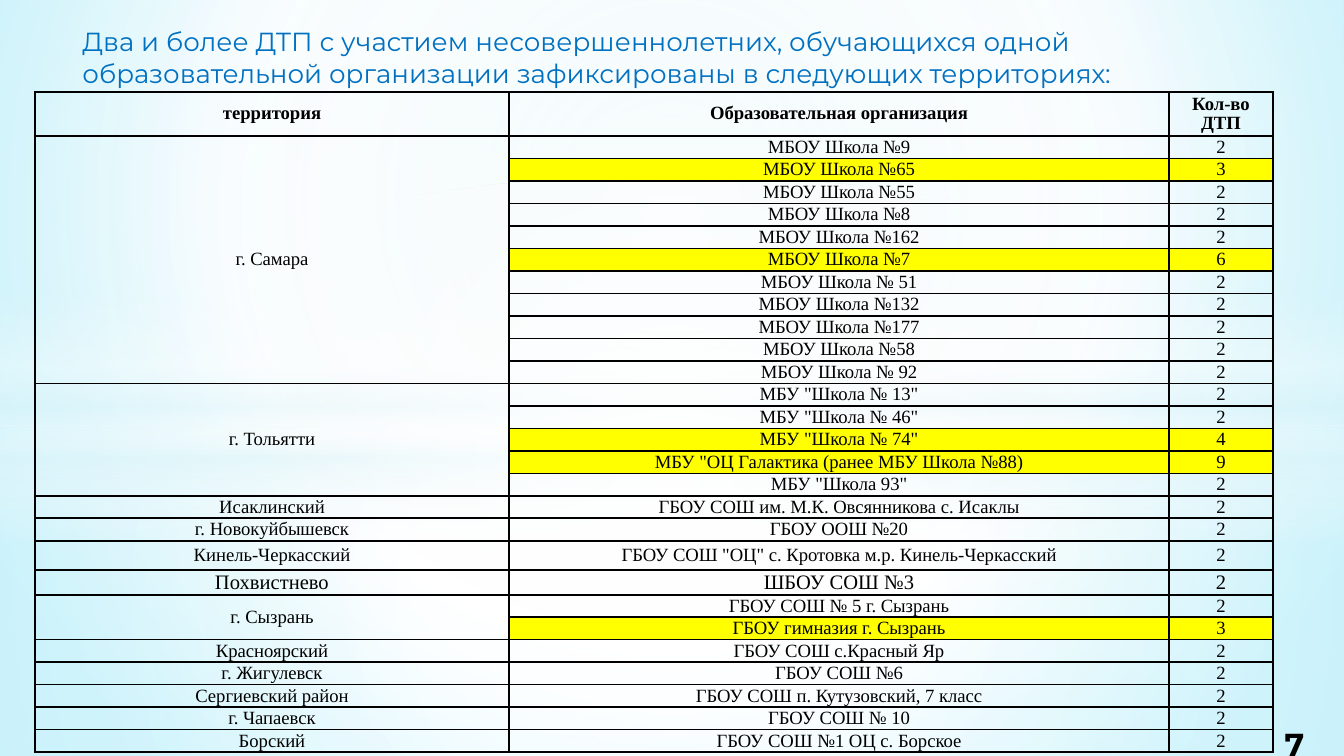
from lxml import etree
from pptx import Presentation
from pptx import util as u
from pptx.dml.color import RGBColor
from pptx.enum import shapes, text
from pptx.oxml.ns import qn

TITLE = ("Два и более ДТП с участием несовершеннолетних, обучающихся одной "
         "образовательной организации зафиксированы в следующих территориях:")
PAGE_NUMBER = "7"
HEADERS = ("территория", "Образовательная организация", "Кол-во ДТП")
TERRITORIES = [
    ("г. Самара", [
        ("МБОУ Школа №9", 2), ("МБОУ Школа №65", 3), ("МБОУ Школа №55", 2),
        ("МБОУ Школа №8", 2), ("МБОУ Школа №162", 2), ("МБОУ Школа №7", 6),
        ("МБОУ Школа № 51", 2), ("МБОУ Школа №132", 2), ("МБОУ Школа №177", 2),
        ("МБОУ Школа №58", 2), ("МБОУ Школа № 92", 2)]),
    ("г. Тольятти", [
        ('МБУ "Школа № 13"', 2), ('МБУ "Школа № 46"', 2), ('МБУ "Школа № 74"', 4),
        ('МБУ "ОЦ Галактика (ранее МБУ Школа №88)', 9), ('МБУ "Школа 93"', 2)]),
    ("Исаклинский", [("ГБОУ СОШ им. М.К. Овсянникова с. Исаклы", 2)]),
    ("г. Новокуйбышевск", [("ГБОУ ООШ №20", 2)]),
    ("Кинель-Черкасский", [('ГБОУ СОШ "ОЦ" с. Кротовка м.р. Кинель-Черкасский', 2)]),
    ("Похвистнево", [("ШБОУ СОШ №3", 2)]),
    ("г. Сызрань", [("ГБОУ СОШ № 5 г. Сызрань", 2), ("ГБОУ гимназия г. Сызрань", 3)]),
    ("Красноярский", [("ГБОУ СОШ с.Красный Яр", 2)]),
    ("г. Жигулевск", [("ГБОУ СОШ №6", 2)]),
    ("Сергиевский район", [("ГБОУ СОШ п. Кутузовский, 7 класс", 2)]),
    ("г. Чапаевск", [("ГБОУ СОШ № 10", 2)]),
    ("Борский", [("ГБОУ СОШ №1 ОЦ с. Борское", 2)]),
]
LARGE_TEXT_TERRITORY = "Похвистнево"
SPECIAL_HEIGHTS = {"Кинель-Черкасский": 29, "Похвистнево": 25}
HEADER_HEIGHT = 44
COLUMN_WIDTHS = (474, 660, 104)
TABLE_LEFT, TABLE_TOP, TABLE_HEIGHT = 35, 92, 660

THEME = {
    "title_font": "Montserrat", "table_font": "Times New Roman",
    "title": "0070C0", "text": "000000", "border": "000000", "highlight": "FFFF00",
    "title_size": 14, "cell_size": 10, "large_size": 11, "number_size": 17,
    "white": "FFFFFF", "pale": "DEF5FA", "sky": "CDEFF7", "cyan": "7CE7FF",
}

# Gradient stops: position %, theme colour, opacity %
BACKGROUND = [(0, "sky", 100), (60, "white", 100), (100, "cyan", 100)]
CENTRE = (50, 50, 50, 50)
# Preset, box in px, stops, focus rectangle (None for a vertical gradient)
GLOWS = [
    ("RECTANGLE", (0, 426, 1344, 330),
     [(0, "white", 91), (37, "white", 76), (100, "pale", 79)], CENTRE),
    ("RECTANGLE", (0, 0, 1344, 426),
     [(0, "white", 89), (48, "white", 62), (100, "pale", 79)], CENTRE),
    ("RECTANGLE", (0, 293, 1344, 253),
     [(0, "white", 0), (29, "white", 30), (45, "pale", 40),
      (55, "white", 26), (65, "pale", 60), (100, "white", 0)], None),
    ("OVAL", (0, 176, 1344, 563), [(0, "white", 100), (54, "white", 0)], CENTRE),
]


def px(length):
    return u.Emu(round(length * 914400 / 134.4))


def box(*lengths):
    return [px(length) for length in lengths]


def gradient(stops, focus):
    fill = etree.Element(qn("a:gradFill"), rotWithShape="1")
    stop_list = etree.SubElement(fill, qn("a:gsLst"))
    for position, color, opacity in stops:
        stop = etree.SubElement(stop_list, qn("a:gs"), pos=str(position * 1000))
        rgb = etree.SubElement(stop, qn("a:srgbClr"), val=THEME[color])
        if opacity < 100:
            etree.SubElement(rgb, qn("a:alpha"), val=str(opacity * 1000))
    if focus:
        shade = etree.SubElement(fill, qn("a:path"), {"path": "circle"})
        sides = {side: str(value * 1000) for side, value in zip("ltrb", focus)}
        etree.SubElement(shade, qn("a:fillToRect"), sides)
    else:
        etree.SubElement(fill, qn("a:lin"), ang="5400000", scaled="0")
    return fill


def swap_solid_fill(properties, new_fill):
    properties.replace(properties.find(qn("a:solidFill")), new_fill)


def format_text(frame, font, size, color, bold=False):
    for paragraph in frame.paragraphs:
        for run in paragraph.runs:
            run.font.name, run.font.size, run.font.bold = font, u.Pt(size), bold
            run.font.color.rgb = RGBColor.from_string(THEME[color])


def add_borders(cell):
    properties = cell._tc.get_or_add_tcPr()
    for index, side in enumerate("LRTB"):
        line = etree.Element(qn(f"a:ln{side}"), w=str(u.Pt(1)))
        fill = etree.SubElement(line, qn("a:solidFill"))
        etree.SubElement(fill, qn("a:srgbClr"), val=THEME["border"])
        properties.insert(index, line)


def fill_cell(cell, value, size, bold=False, highlighted=False):
    cell.margin_left = cell.margin_right = u.Inches(0.07)
    cell.margin_top = cell.margin_bottom = 0
    cell.vertical_anchor = text.MSO_ANCHOR.MIDDLE
    cell.text_frame.text = str(value)
    paragraph = cell.text_frame.paragraphs[0]
    paragraph.alignment = text.PP_ALIGN.CENTER
    if bold:
        paragraph.line_spacing = 0.93
    format_text(cell.text_frame, THEME["table_font"], size, "text", bold)
    if highlighted:
        cell.fill.solid()
        cell.fill.fore_color.rgb = RGBColor.from_string(THEME["highlight"])
    else:
        cell.fill.background()
    add_borders(cell)


def add_backdrop(slide):
    slide.background.fill.solid()
    swap_solid_fill(slide._element.cSld.bg.bgPr, gradient(BACKGROUND, (20, 10, 20, 60)))
    for preset, place, stops, focus in GLOWS:
        shape = slide.shapes.add_shape(shapes.MSO_SHAPE[preset], *box(*place))
        shape.shadow.inherit = False
        shape.line.fill.background()
        shape.fill.solid()
        swap_solid_fill(shape._element.spPr, gradient(stops, focus))


def add_page_number(slide):
    frame = slide.shapes.add_textbox(*box(1274, 719, 70, 50)).text_frame
    frame.word_wrap = True
    frame.margin_left = frame.margin_right = u.Inches(0.08)
    frame.margin_top = frame.margin_bottom = u.Inches(0.04)
    frame.text = PAGE_NUMBER
    format_text(frame, THEME["title_font"], THEME["number_size"], "text", bold=True)


def add_accident_table(slide):
    row_count = 1 + sum(len(schools) for _, schools in TERRITORIES)
    special_total = HEADER_HEIGHT + sum(SPECIAL_HEIGHTS.values())
    row_height = (TABLE_HEIGHT - special_total) / (row_count - 1 - len(SPECIAL_HEIGHTS))
    table = slide.shapes.add_table(
        row_count, len(HEADERS),
        *box(TABLE_LEFT, TABLE_TOP, sum(COLUMN_WIDTHS), TABLE_HEIGHT)).table
    table.first_row = table.horz_banding = False
    for column, width in zip(table.columns, COLUMN_WIDTHS):
        column.width = px(width)
    table.rows[0].height = px(HEADER_HEIGHT)
    for column, header in enumerate(HEADERS):
        fill_cell(table.cell(0, column), header, THEME["cell_size"], bold=True)

    row = 1
    for territory, schools in TERRITORIES:
        size = THEME["large_size" if territory == LARGE_TEXT_TERRITORY else "cell_size"]
        first = row
        for school, accidents in schools:
            table.rows[row].height = px(SPECIAL_HEIGHTS.get(territory, row_height))
            fill_cell(table.cell(row, 0), territory if row == first else "", size)
            for column, value in ((1, school), (2, accidents)):
                fill_cell(table.cell(row, column), value, size, highlighted=accidents > 2)
            row += 1
        if len(schools) > 1:
            table.cell(first, 0).merge(table.cell(row - 1, 0))


def place_title(slide):
    """Format the title and bring it in front of the backdrop."""
    title = slide.shapes.title
    title.left, title.top, title.width, title.height = box(69, 19, 1196, 77)
    frame = title.text_frame
    frame.text = TITLE
    frame.word_wrap = True
    frame.auto_size = text.MSO_AUTO_SIZE.NONE
    frame.vertical_anchor = text.MSO_ANCHOR.TOP
    frame.paragraphs[0].alignment = text.PP_ALIGN.LEFT
    format_text(frame, THEME["title_font"], THEME["title_size"], "title")
    slide.shapes._spTree.append(title._element)


def main():
    presentation = Presentation()
    presentation.slide_width, presentation.slide_height = box(1344, 756)
    slide = presentation.slides.add_slide(presentation.slide_layouts[5])
    add_backdrop(slide)
    add_page_number(slide)
    add_accident_table(slide)
    place_title(slide)
    presentation.save("out.pptx")


if __name__ == "__main__":
    main()
